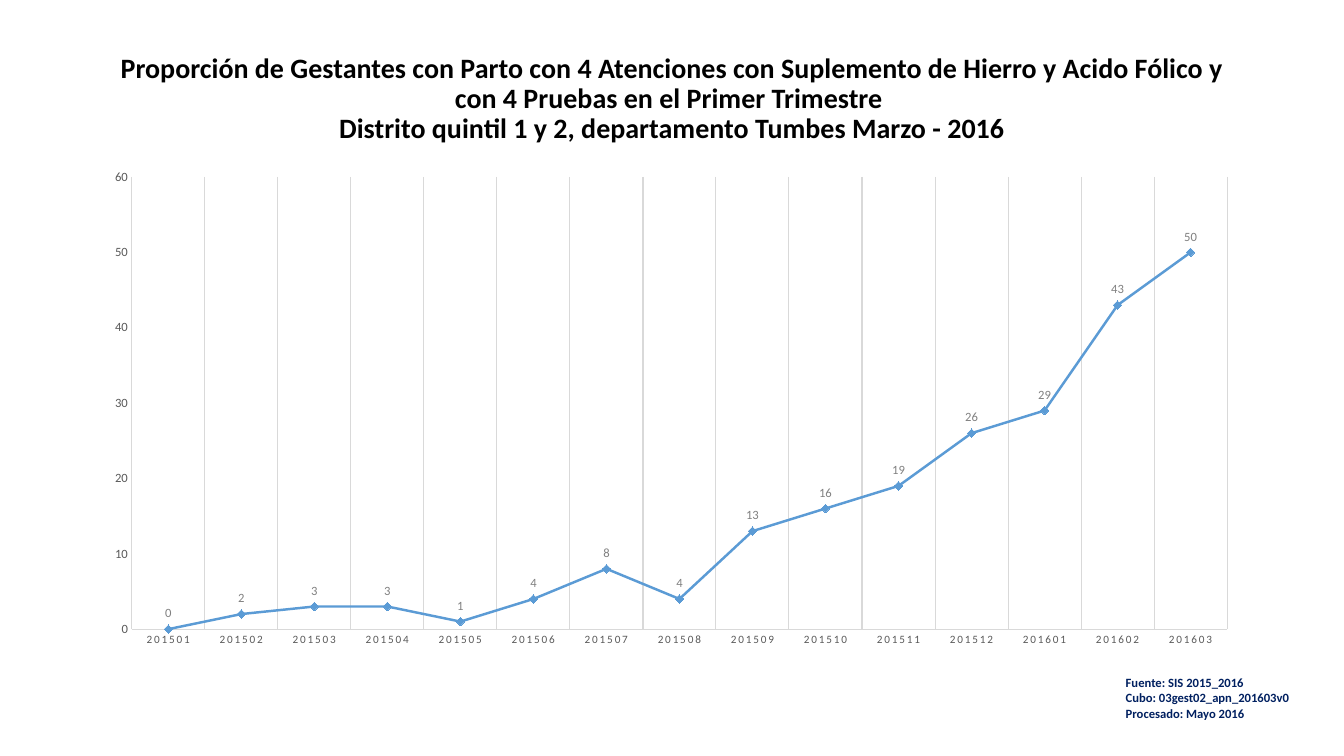
from lxml.etree import SubElement
from pptx import Presentation
from pptx.chart.data import CategoryChartData
from pptx.dml.color import RGBColor
from pptx.enum.chart import XL_CHART_TYPE, XL_LABEL_POSITION, XL_MARKER_STYLE, XL_TICK_MARK
from pptx.enum.text import MSO_ANCHOR, PP_ALIGN
from pptx.oxml.ns import qn
from pptx.util import Cm, Pt

FONT = "Calibri"
GRID_GRAY = "D9D9D9"
AXIS_GRAY = "595959"
SERIES_BLUE = "5B9BD5"


def rgb(color):
    return RGBColor.from_string(color)


def style_font(font, size, color, bold=False):
    font.name = FONT
    font.size = Pt(size)
    font.bold = bold
    font.color.rgb = rgb(color)


presentation = Presentation()
presentation.slide_width = Cm(33.87)
presentation.slide_height = Cm(19.05)
slide = presentation.slides.add_slide(presentation.slide_layouts[6])

# Title
title = slide.shapes.add_textbox(Cm(2.33), Cm(1.01), Cm(29.21), Cm(3))
title_frame = title.text_frame
title_frame.word_wrap = True
title_frame.vertical_anchor = MSO_ANCHOR.MIDDLE
paragraph = title_frame.paragraphs[0]
paragraph.text = (
    "Proporción de Gestantes con Parto con 4 Atenciones con Suplemento de Hierro "
    "y Acido Fólico y con 4 Pruebas en el Primer Trimestre \v"
    "Distrito quintil 1 y 2, departamento Tumbes Marzo - 2016"
)
paragraph.alignment = PP_ALIGN.CENTER
paragraph.line_spacing = 0.9
style_font(paragraph.font, 20, "000000", bold=True)

# Line chart by month
months = [f"2015{month:02}" for month in range(1, 13)] + ["201601", "201602", "201603"]
chart_data = CategoryChartData(number_format="0")
chart_data.categories = months
chart_data.add_series("Series 1", [0, 2, 3, 3, 1, 4, 8, 4, 13, 16, 19, 26, 29, 43, 50])
chart = slide.shapes.add_chart(
    XL_CHART_TYPE.LINE_MARKERS, Cm(2.33), Cm(4.01), Cm(29.21), Cm(12.55), chart_data
).chart
chart.has_legend = False
chart.has_title = False
style_font(chart.font, 10, "000000")

category_axis, value_axis = chart.category_axis, chart.value_axis
for axis, size in ((category_axis, 8), (value_axis, 9)):
    axis.major_tick_mark = XL_TICK_MARK.NONE
    axis.minor_tick_mark = XL_TICK_MARK.NONE
    axis.format.line.color.rgb = rgb(GRID_GRAY)
    axis.format.line.width = Pt(0.75)
    style_font(axis.tick_labels.font, size, AXIS_GRAY)

category_axis.has_major_gridlines = True
gridline = category_axis.major_gridlines.format.line
gridline.color.rgb = rgb(GRID_GRAY)
gridline.width = Pt(0.75)
category_text = category_axis._element.find(".//" + qn("a:defRPr"))
category_text.set("spc", "120")

value_axis.has_major_gridlines = False
value_axis.minimum_scale = 0
value_axis.maximum_scale = 60
value_axis.major_unit = 10
value_axis.tick_labels.number_format = "0"
value_axis.tick_labels.number_format_is_linked = False

plot = chart.plots[0]
plot.vary_by_categories = False
series = plot.series[0]
series.smooth = False
series.format.line.color.rgb = rgb(SERIES_BLUE)
series.format.line.width = Pt(1.75)
series.marker.style = XL_MARKER_STYLE.DIAMOND
series.marker.size = 6
series.marker.format.fill.solid()
series.marker.format.fill.fore_color.rgb = rgb(SERIES_BLUE)
series.marker.format.line.color.rgb = rgb(SERIES_BLUE)

labels = series.data_labels
labels.show_value = True
labels.position = XL_LABEL_POSITION.ABOVE
labels.number_format = "0"
labels.number_format_is_linked = False
style_font(labels.font, 9, "808080")

# Plot area inside the chart frame, in percent of its size
plot_area = chart._chartSpace.chart.plotArea
layout = plot_area.find(qn("c:layout"))
if layout is None:
    layout = SubElement(plot_area, qn("c:layout"))
    plot_area.insert(0, layout)
manual_layout = SubElement(layout, qn("c:manualLayout"))
layout_values = {
    "layoutTarget": "inner", "xMode": "edge", "yMode": "edge",
    "x": 3.4 / 100, "y": 3.6 / 100, "w": 94.5 / 100, "h": 90.8 / 100,
}
for name, value in layout_values.items():
    SubElement(manual_layout, qn(f"c:{name}")).set("val", str(value))

# Source note
note = slide.shapes.add_textbox(Cm(28.12), Cm(16.89), Cm(5.75), Cm(2.16))
note.text_frame.word_wrap = True
note.text_frame.text = "Fuente: SIS 2015_2016\nCubo: 03gest02_apn_201603v0\nProcesado: Mayo 2016"
for paragraph in note.text_frame.paragraphs:
    style_font(paragraph.font, 9, "002060", bold=True)

presentation.save("out.pptx")
